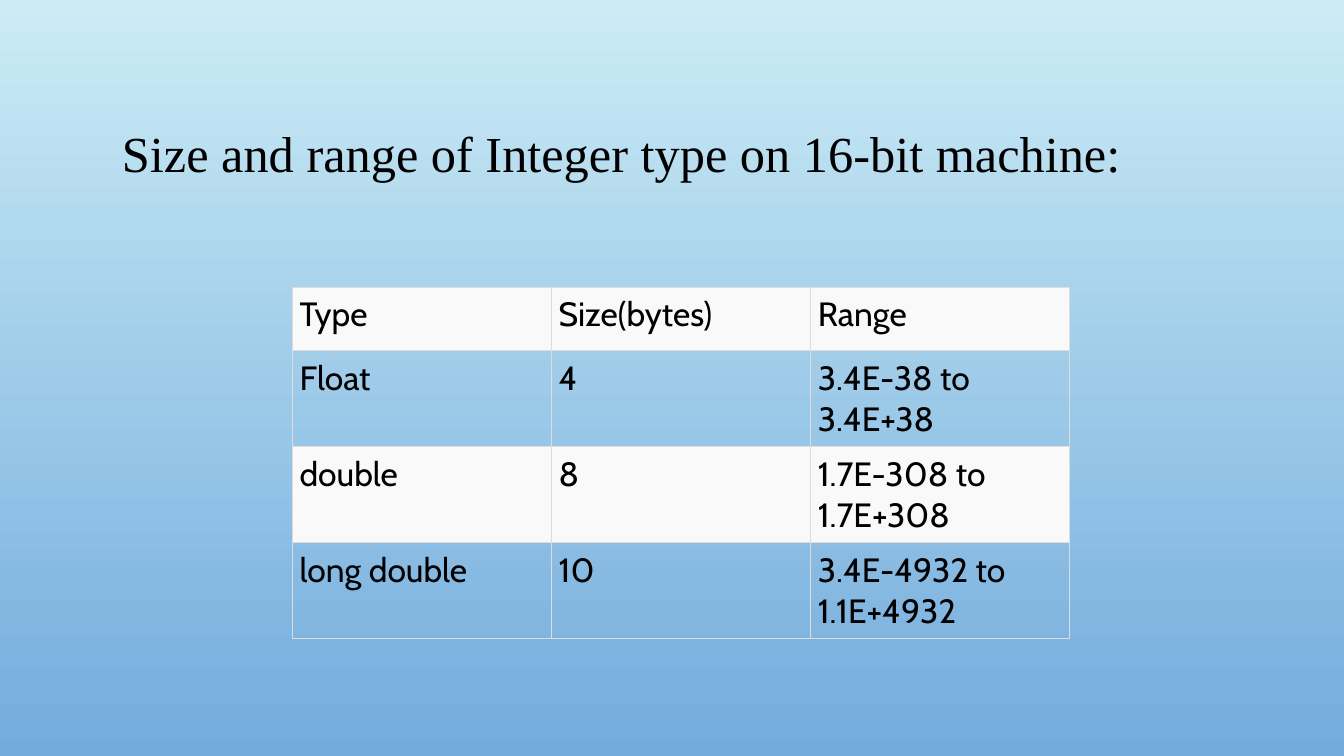
from lxml.etree import SubElement as Sub
from pptx import Presentation
from pptx.dml.color import RGBColor
from pptx.enum.text import MSO_ANCHOR as Anchor, MSO_AUTO_SIZE as Auto, PP_ALIGN as Align
from pptx.oxml.ns import qn
from pptx.util import Cm, Pt

ROWS = [
    ("Type", "Size(bytes)", "Range"),
    ("Float", "4", "3.4E-38 to 3.4E+38"),
    ("double", "8", "1.7E-308 to 1.7E+308"),
    ("long double", "10", "3.4E-4932 to 1.1E+4932"),
]


def paint(color, code):
    color.rgb = RGBColor.from_string(code)


def style(para, face, size):
    para.alignment = Align.LEFT
    for run in para.runs:
        run.font.name = face
        run.font.size = Pt(size)
        paint(run.font.color, "000000")


def shade(slide, top, base):
    fill = slide.background.fill
    fill.gradient()
    fill.gradient_angle = 270
    for stop, code in zip(fill.gradient_stops, (top, base)):
        paint(stop.color, code)


def head(slide, text):
    title = slide.shapes.title
    title.left, title.top = Cm(2.82), Cm(2.79)
    title.width, title.height = Cm(25.83), Cm(2.57)
    frame = title.text_frame
    frame.text = text
    frame.word_wrap = True
    frame.auto_size = Auto.NONE
    frame.vertical_anchor = Anchor.TOP
    frame.margin_top = Cm(0.28)
    style(frame.paragraphs[0], "Times New Roman", 36)


def border(cell, code, width):
    props = cell._tc.get_or_add_tcPr()
    for side in ("a:lnL", "a:lnR", "a:lnT", "a:lnB"):
        line = Sub(props, qn(side), w=str(Pt(width)))
        solid = Sub(line, qn("a:solidFill"))
        Sub(solid, qn("a:srgbClr"), val=code)


def fill_cell(cell, text, banded):
    border(cell, "DDDDDD", 0.6)
    if banded:
        cell.fill.solid()
        paint(cell.fill.fore_color, "F9F9F9")
    else:
        cell.fill.background()
    cell.margin_left = cell.margin_right = Cm(0.18)
    cell.margin_top = cell.margin_bottom = Cm(0.18)
    cell.vertical_anchor = Anchor.TOP
    cell.text_frame.text = text
    style(cell.text_frame.paragraphs[0], "Cabin", 24)


def grid(slide, rows):
    frame = slide.shapes.add_table(
        len(rows), len(rows[0]), Cm(7.37), Cm(7.24), Cm(19.59), Cm(8.71))
    table = frame.table
    table.first_row = table.horz_banding = False
    for col in table.columns:
        col.width = Cm(6.53)
    for r, row in enumerate(rows):
        table.rows[r].height = Cm(2.37 if r else 1.6)
        for c, text in enumerate(row):
            fill_cell(table.cell(r, c), text, r % 2 == 0)


def main():
    deck = Presentation()
    deck.slide_width, deck.slide_height = Cm(33.87), Cm(19.05)
    slide = deck.slides.add_slide(deck.slide_layouts[5])
    shade(slide, "CBECF5", "73ABDD")
    head(slide, "Size and range of Integer type on 16-bit machine:")
    grid(slide, ROWS)
    deck.save("out.pptx")


if __name__ == "__main__":
    main()
